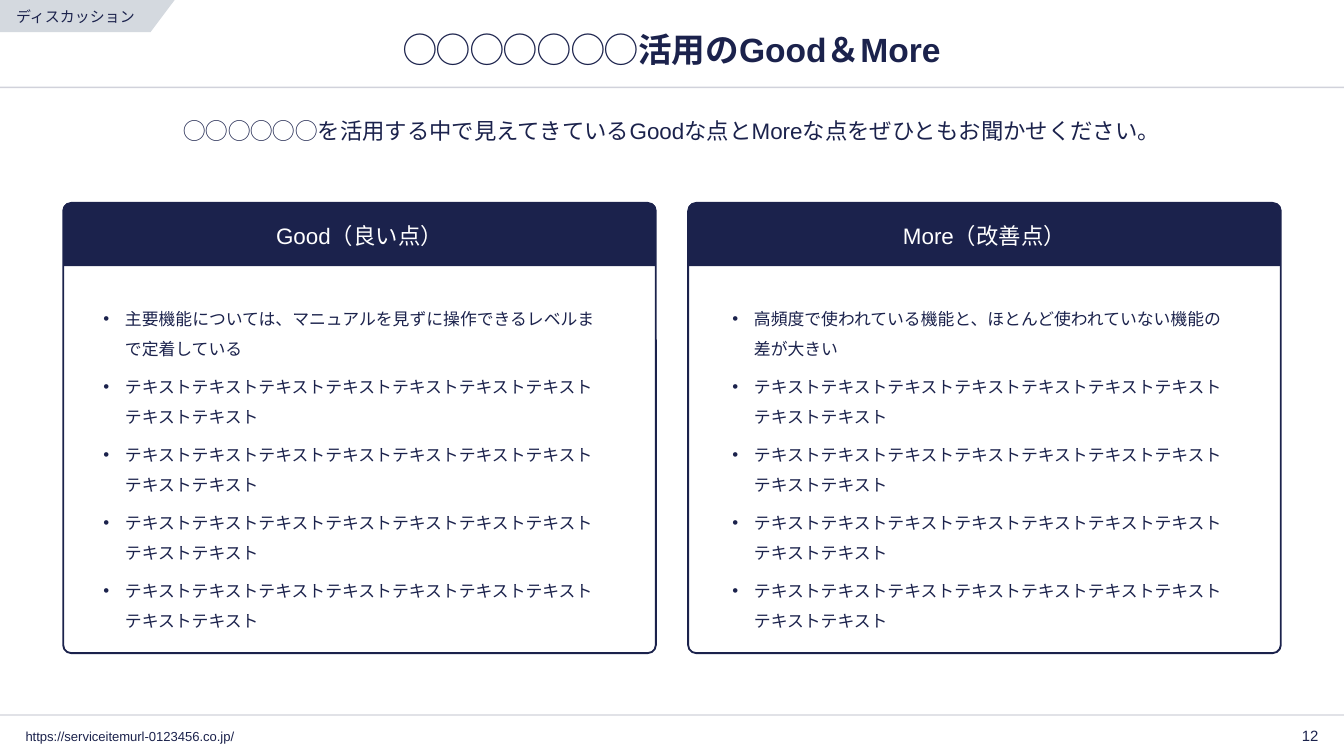
import pptx
import pptx.util
import pptx.dml.color
import pptx.enum.shapes
import pptx.enum.text
import pptx.oxml
import pptx.oxml.ns
from lxml import etree

Inches = pptx.util.Inches
Pt = pptx.util.Pt
SHAPE = pptx.enum.shapes.MSO_SHAPE
ALIGN = pptx.enum.text.PP_ALIGN
ANCHOR = pptx.enum.text.MSO_ANCHOR

COLORS = {"navy": "1B224C", "white": "FFFFFF", "tab": "D4D9DF"}
FONT = "Arial"
WIDTH = 10
HEIGHT = WIDTH * 9 / 16

TAB_LABEL = "ディスカッション"
TITLE = "◯◯◯◯◯◯◯活用のGood＆More"
LEAD = "◯◯◯◯◯◯を活用する中で見えてきているGoodな点とMoreな点をぜひともお聞かせください。"
URL = "https://serviceitemurl-0123456.co.jp/"
PAGE_NUMBER = "12"
FILLER = ["テキスト" * 9] * 4
CARDS = [
    {"heading": "Good（良い点）", "list_left": 0.73,
     "points": ["主要機能については、マニュアルを見ずに操作できるレベルまで定着している"] + FILLER},
    {"heading": "More（改善点）", "list_left": 5.41,
     "points": ["高頻度で使われている機能と、ほとんど使われていない機能の差が大きい"] + FILLER},
]

RULE_TOPS = [0.65, 5.32]
MARGIN, CARD_TOP, CARD_WIDTH, CARD_HEIGHT = 0.47, 1.51, 4.41, 3.35
HEADING_HEIGHT = 0.47
CARD_STEP = WIDTH - 2 * MARGIN - CARD_WIDTH
LIST_TOP, LIST_WIDTH, LIST_HEIGHT = 2.18, 3.82, 2.44
BULLET_INDENT = 0.16
TAB_WIDTH, TAB_FOOT, TAB_HEIGHT = 1.3, 1.12, 0.24


def rgb(name):
    return pptx.dml.color.RGBColor.from_string(COLORS[name])


def write(shape, texts, size, color="navy", align=ALIGN.LEFT, bold=False,
          anchor=ANCHOR.MIDDLE, insets=(0.04, 0.04, 0.04, 0.04)):
    """Fill a shape with one paragraph per text and return the paragraphs."""
    frame = shape.text_frame
    frame.word_wrap = True
    frame.vertical_anchor = anchor
    (frame.margin_left, frame.margin_top,
     frame.margin_right, frame.margin_bottom) = map(Inches, insets)
    frame.text = "\n".join(texts)
    for paragraph in frame.paragraphs:
        paragraph.alignment = align
        paragraph.font.name = FONT
        paragraph.font.size = Pt(size)
        paragraph.font.bold = bold
        paragraph.font.color.rgb = rgb(color)
    return frame.paragraphs


def add_text(slide, box, texts, size, **style):
    return write(slide.shapes.add_textbox(*map(Inches, box)), texts, size, **style)


def paint(shape, fill=None, line=None):
    shape.shadow.inherit = False
    if fill:
        shape.fill.solid()
        shape.fill.fore_color.rgb = rgb(fill)
    else:
        shape.fill.background()
    if line:
        shape.line.color.rgb = rgb(line)
        shape.line.width = Pt(1)
    else:
        shape.line.fill.background()


def add_rule(slide, top):
    """Draw a full-width line at 20 % opacity."""
    rule = slide.shapes.add_connector(
        pptx.enum.shapes.MSO_CONNECTOR.STRAIGHT,
        0, Inches(top), Inches(WIDTH), Inches(top))
    rule.line.width = Pt(0.75)
    rule.line.color.rgb = rgb("navy")
    properties = rule._element.spPr
    color = properties.find(".//" + pptx.oxml.ns.qn("a:srgbClr"))
    etree.SubElement(color, pptx.oxml.ns.qn("a:alpha"), val="20000")
    etree.SubElement(properties, pptx.oxml.ns.qn("a:effectLst"))


def add_bullet(paragraph):
    properties = paragraph._p.get_or_add_pPr()
    indent = Inches(BULLET_INDENT)
    properties.set("marL", str(indent))
    properties.set("indent", str(-indent))
    bullet_color = etree.SubElement(properties, pptx.oxml.ns.qn("a:buClr"))
    etree.SubElement(bullet_color, pptx.oxml.ns.qn("a:srgbClr"), val=COLORS["navy"])
    etree.SubElement(properties, pptx.oxml.ns.qn("a:buFont"), typeface=FONT)
    etree.SubElement(properties, pptx.oxml.ns.qn("a:buChar"), char="•")
    # The schema wants the default run properties after the bullet.
    properties.append(properties.find(pptx.oxml.ns.qn("a:defRPr")))


def add_card(slide, left, card):
    frame = slide.shapes.add_shape(
        SHAPE.ROUNDED_RECTANGLE,
        *map(Inches, (left, CARD_TOP, CARD_WIDTH, CARD_HEIGHT)))
    frame.adjustments[0] = 0.018
    paint(frame, line="navy")

    heading = slide.shapes.add_shape(
        SHAPE.ROUND_2_SAME_RECTANGLE,
        *map(Inches, (left, CARD_TOP, CARD_WIDTH, HEADING_HEIGHT)))
    heading.adjustments[0] = 0.105
    heading.adjustments[1] = 0
    paint(heading, fill="navy")
    write(heading, [card["heading"]], 12, color="white", align=ALIGN.CENTER)

    box = (card["list_left"], LIST_TOP, LIST_WIDTH, LIST_HEIGHT)
    paragraphs = add_text(slide, box, card["points"], 9, anchor=ANCHOR.TOP)
    for index, paragraph in enumerate(paragraphs):
        paragraph.line_spacing = 1.5
        paragraph.space_before = Pt(4 if index else 0)
        add_bullet(paragraph)


def add_tab(slide):
    corners = [(0, 0), (TAB_WIDTH, 0), (TAB_FOOT, TAB_HEIGHT), (0, TAB_HEIGHT)]
    # Freeform points are whole numbers, so they are given in EMU.
    start, *others = [(Inches(x), Inches(y)) for x, y in corners]
    builder = slide.shapes.build_freeform(*start)
    builder.add_line_segments(others, close=True)
    tab = builder.convert_to_shape()
    paint(tab, fill="tab")
    write(tab, [TAB_LABEL], 8, insets=(0.12, 0.08, 0.08, 0.08))


def main():
    presentation = pptx.Presentation()
    presentation.slide_width = Inches(WIDTH)
    presentation.slide_height = Inches(HEIGHT)
    slide = presentation.slides.add_slide(presentation.slide_layouts[6])

    for top in RULE_TOPS:
        add_rule(slide, top)
    add_text(slide, (9.46, 5.37, 0.39, 0.2), [PAGE_NUMBER], 8, align=ALIGN.RIGHT)
    add_text(slide, (MARGIN, 0.17, WIDTH - 2 * MARGIN, 0.39), [TITLE], 18,
             align=ALIGN.CENTER, bold=True)
    add_text(slide, (0.15, 5.38, 3.54, 0.2), [URL], 7)
    add_text(slide, (MARGIN, 0.83, WIDTH - 2 * MARGIN, 0.51), [LEAD], 12,
             align=ALIGN.CENTER, anchor=ANCHOR.TOP)
    for index, card in enumerate(CARDS):
        add_card(slide, MARGIN + index * CARD_STEP, card)
    add_tab(slide)

    presentation.save("out.pptx")


if __name__ == "__main__":
    main()
